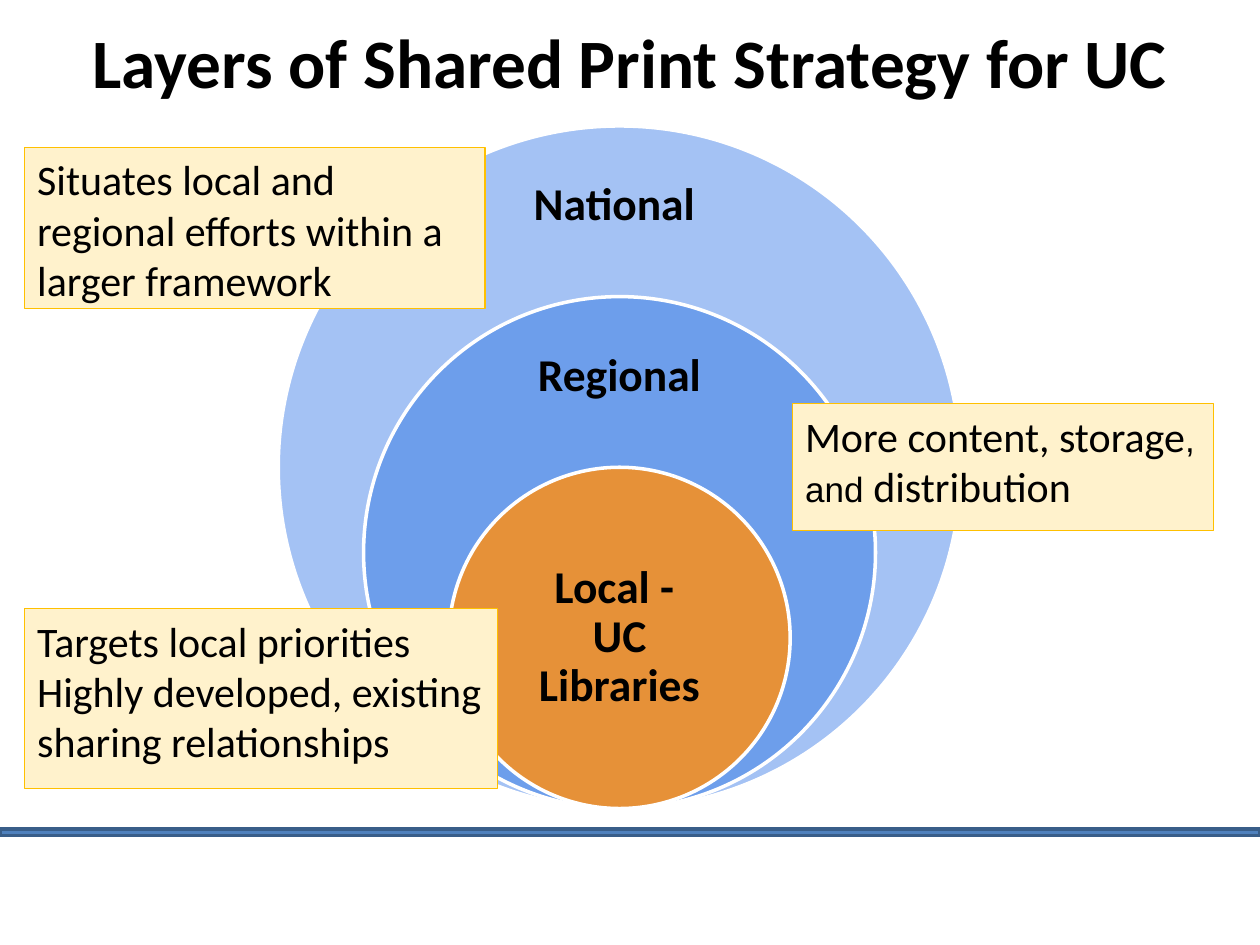
"""Build the slide on nested layers of a shared print strategy."""
from dataclasses import dataclass

from pptx import Presentation
from pptx.dml.color import RGBColor
from pptx.enum.shapes import MSO_SHAPE
from pptx.enum.text import MSO_ANCHOR, MSO_AUTO_SIZE, PP_ALIGN
from pptx.util import Cm, Pt

RECTANGLE, OVAL = MSO_SHAPE.RECTANGLE, MSO_SHAPE.OVAL
TOP, MIDDLE = MSO_ANCHOR.TOP, MSO_ANCHOR.MIDDLE
LEFT, CENTER = PP_ALIGN.LEFT, PP_ALIGN.CENTER
NO_AUTOFIT = MSO_AUTO_SIZE.NONE


@dataclass(frozen=True)
class Theme:
    font: str = "Calibri"
    small_font: str = "Arial"
    text: str = "000000"
    ring_line: str = "FFFFFF"
    national: str = "A4C2F4"
    regional: str = "6D9EEB"
    local: str = "E69138"
    note_fill: str = "FFF2CC"
    note_line: str = "FFC000"
    bar_fill: str = "4F81BD"
    bar_line: str = "395E89"
    title_size: float = 39.6
    label_size: float = 26
    note_size: float = 24
    small_size: float = 20


THEME = Theme()


@dataclass(frozen=True)
class Box:
    left: float
    top: float
    width: float
    height: float

    def lengths(self) -> tuple:
        return Cm(self.left), Cm(self.top), Cm(self.width), Cm(self.height)


@dataclass(frozen=True)
class Run:
    text: str
    size: float = THEME.note_size
    font: str = THEME.font
    bold: bool = False


@dataclass(frozen=True)
class Layer:
    lines: tuple[str, ...]
    scale: float
    fill: str
    label_top: float
    label_width: float
    label_height: float
    inset: float


@dataclass(frozen=True)
class Note:
    box: Box
    paragraphs: tuple[tuple[Run, ...], ...]


CIRCLE_CENTER, CIRCLE_BOTTOM, LARGEST_DIAMETER = 12.49, 16.3, 13.76

LAYERS = (
    Layer(("National ",), 1, THEME.national, 3.12, 4.8, 2.06, 0.28),
    Layer(("Regional",), 0.75, THEME.regional, 6.63, 4.8, 1.93, 0.4),
    Layer(("Local - ", "UC Libraries"), 0.5, THEME.local, 11.15, 4.88, 3.43, 0.3),
)

NOTES = (
    Note(Box(0.5, 12.27, 9.53, 3.63), (
        (Run("Targets local priorities"),),
        (Run("Highly developed, existing sharing relationships"),),
    )),
    Note(Box(15.98, 8.14, 8.48, 2.56), ((
        Run("More content, storage"),
        Run(", and ", THEME.small_size, THEME.small_font),
        Run("distribution"),
    ),)),
    Note(Box(0.5, 2.97, 9.28, 3.25), (
        (Run("Situates local and regional efforts within a larger framework"),),
    )),
)


def add_outlined(slide, kind, box: Box, fill: str, line: str, weight: float):
    shape = slide.shapes.add_shape(kind, *box.lengths())
    shape.shadow.inherit = False
    shape.fill.solid()
    shape.fill.fore_color.rgb = RGBColor.from_string(fill)
    shape.line.color.rgb = RGBColor.from_string(line)
    shape.line.width = Pt(weight)
    return shape


def write(shape, paragraphs, alignment, anchor, inset: tuple[float, float],
          spacing: float = 1.0) -> None:
    frame = shape.text_frame
    frame.word_wrap = True
    frame.auto_size = NO_AUTOFIT
    frame.vertical_anchor = anchor
    frame.margin_left = frame.margin_right = Cm(inset[0])
    frame.margin_top = frame.margin_bottom = Cm(inset[1])
    for index, runs in enumerate(paragraphs):
        paragraph = frame.add_paragraph() if index else frame.paragraphs[0]
        paragraph.alignment = alignment
        paragraph.line_spacing = spacing
        for item in runs:
            run = paragraph.add_run()
            run.text = item.text
            run.font.name = item.font
            run.font.size = Pt(item.size)
            run.font.bold = item.bold
            run.font.color.rgb = RGBColor.from_string(THEME.text)


def add_title(slide, text: str) -> None:
    title = slide.shapes.title
    title.left, title.top, title.width, title.height = Box(1.27, 0.1, 22.86, 2.24).lengths()
    write(title, ((Run(text, THEME.title_size, bold=True),),), CENTER, MIDDLE, (0.25, 0.13))


def add_layer(slide, layer: Layer) -> None:
    diameter = LARGEST_DIAMETER * layer.scale
    circle = Box(CIRCLE_CENTER - diameter / 2, CIRCLE_BOTTOM - diameter, diameter, diameter)
    add_outlined(slide, OVAL, circle, layer.fill, THEME.ring_line, 2)
    label_box = Box(CIRCLE_CENTER - layer.label_width / 2, layer.label_top,
                    layer.label_width, layer.label_height)
    label = slide.shapes.add_textbox(*label_box.lengths())
    paragraphs = [(Run(line, THEME.label_size, bold=True),) for line in layer.lines]
    write(label, paragraphs, CENTER, MIDDLE, (layer.inset, layer.inset), 0.9)


def add_note(slide, note: Note) -> None:
    shape = add_outlined(slide, RECTANGLE, note.box, THEME.note_fill, THEME.note_line, 0.75)
    write(shape, note.paragraphs, LEFT, TOP, (0.25, 0.13))


def main() -> None:
    presentation = Presentation()
    presentation.slide_width, presentation.slide_height = Cm(25.4), Cm(19.05)
    slide = presentation.slides.add_slide(presentation.slide_layouts[5])
    add_outlined(slide, RECTANGLE, Box(0, 16.71, 25.4, 0.13),
                 THEME.bar_fill, THEME.bar_line, 2)
    add_title(slide, "Layers of Shared Print Strategy for UC")
    for layer in LAYERS:
        add_layer(slide, layer)
    for note in NOTES:
        add_note(slide, note)
    presentation.save("out.pptx")


if __name__ == "__main__":
    main()
